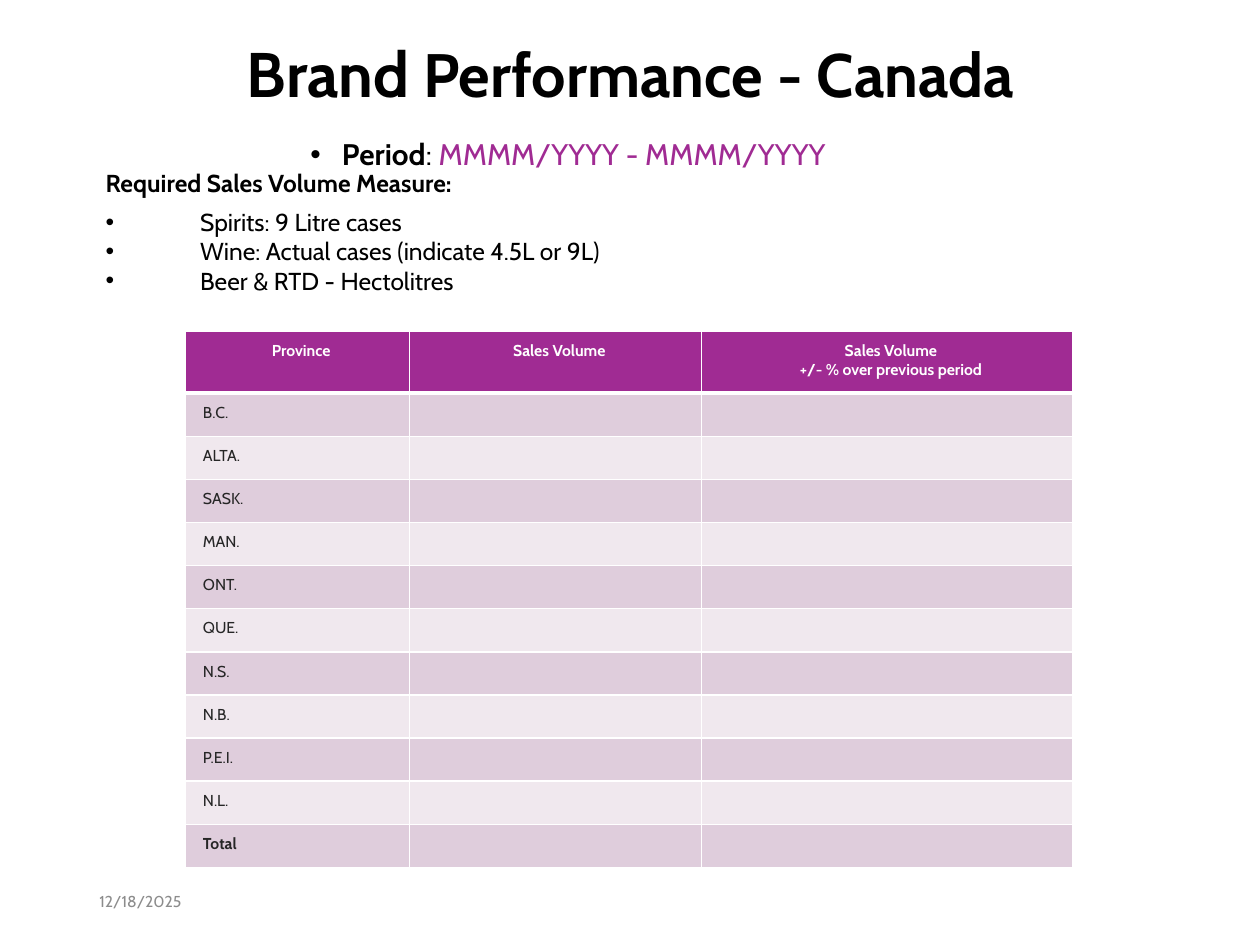
from dataclasses import dataclass

import lxml.etree
import pptx
import pptx.dml.color
import pptx.enum.text
import pptx.oxml
import pptx.oxml.ns
import pptx.util

Pt = pptx.util.Pt
Align = pptx.enum.text.PP_ALIGN
Anchor = pptx.enum.text.MSO_ANCHOR
qn = pptx.oxml.ns.qn


@dataclass(frozen=True)
class Theme:
    font: str = "Cabin"
    text: str = "000000"
    accent: str = "A02B93"
    white: str = "FFFFFF"
    table_text: str = "262626"
    bands: tuple = ("DFCDDC", "F0E8EE")
    muted: str = "8C8C8C"
    title_size: float = 35
    title_lead_size: float = 36
    period_size: float = 17
    body_size: float = 14
    small_size: float = 9


class SlideBuilder:
    def __init__(self, slide, theme):
        self.slide = slide
        self.theme = theme

    def add_run(self, paragraph, text, size, color, bold=False):
        run = paragraph.add_run()
        run.text = text
        run.font.name = self.theme.font
        run.font.size = Pt(size)
        run.font.bold = bold
        run.font.color.rgb = pptx.dml.color.RGBColor.from_string(color)

    def place_title(self, left, top, width, height):
        title = self.slide.shapes.title
        title.left, title.top = Pt(left), Pt(top)
        title.width, title.height = Pt(width), Pt(height)
        frame = title.text_frame
        frame.auto_size = pptx.enum.text.MSO_AUTO_SIZE.NONE
        frame.vertical_anchor = Anchor.MIDDLE
        paragraph = frame.paragraphs[0]
        paragraph.alignment = Align.CENTER
        paragraph.line_spacing = 0.9
        return paragraph

    def add_text_box(self, left, top, width, height):
        box = self.slide.shapes.add_textbox(Pt(left), Pt(top), Pt(width), Pt(height))
        box.text_frame.word_wrap = True
        box.text_frame.vertical_anchor = Anchor.MIDDLE
        return box.text_frame

    def add_bullet(self, paragraph, margin, indent):
        """Call after the paragraph spacing is set, as the XML order matters."""
        properties = paragraph._p.get_or_add_pPr()
        properties.set("marL", str(Pt(margin)))
        properties.set("indent", str(Pt(indent)))
        lxml.etree.SubElement(properties, qn("a:buFont")).set("typeface", "Arial")
        lxml.etree.SubElement(properties, qn("a:buChar")).set("char", "•")

    def style_cell(self, cell, fill, top=1, bottom=1):
        """Set fill, margins and white borders; top and bottom are line widths."""
        cell.margin_left = Pt(10)
        cell.margin_right = cell.margin_top = cell.margin_bottom = Pt(5.76)
        cell.fill.solid()
        cell.fill.fore_color.rgb = pptx.dml.color.RGBColor.from_string(fill)
        borders = {"a:lnL": 1, "a:lnR": 1, "a:lnT": top, "a:lnB": bottom}
        for index, (tag, width) in enumerate(borders.items()):
            line = pptx.oxml.parse_xml(
                f'<{tag} {pptx.oxml.ns.nsdecls("a")} w="{Pt(width)}"><a:solidFill>'
                f'<a:srgbClr val="{self.theme.white}"/></a:solidFill></{tag}>'
            )
            cell._tc.get_or_add_tcPr().insert(index, line)

    def fill_cell(self, cell, text, color, bold, alignment):
        for index, line in enumerate(text.split("\n")):
            frame = cell.text_frame
            paragraph = frame.add_paragraph() if index else frame.paragraphs[0]
            paragraph.alignment = alignment
            if line:
                self.add_run(paragraph, line, self.theme.small_size, color, bold)
            else:
                end = lxml.etree.SubElement(paragraph._p, qn("a:endParaRPr"))
                end.set("sz", str(int(self.theme.small_size * 100)))

    def add_table(self, left, top, column_widths, header_height, row_height, headers, labels):
        theme = self.theme
        shape = self.slide.shapes.add_table(
            len(labels) + 1, len(headers), Pt(left), Pt(top),
            Pt(sum(column_widths)), Pt(header_height + row_height * len(labels)),
        )
        table = shape.table
        for column, width in zip(table.columns, column_widths):
            column.width = Pt(width)
        for index, row in enumerate(table.rows):
            row.height = Pt(row_height if index else header_height)

        for column, header in enumerate(headers):
            cell = table.cell(0, column)
            self.style_cell(cell, theme.accent, bottom=3)
            self.fill_cell(cell, header, theme.white, True, Align.CENTER)
        for row, label in enumerate(labels, start=1):
            for column in range(len(headers)):
                cell = table.cell(row, column)
                self.style_cell(cell, theme.bands[(row - 1) % 2], top=3 if row == 1 else 1)
                text = "" if column else label
                self.fill_cell(cell, text, theme.table_text, label == "Total", Align.LEFT)


def main():
    presentation = pptx.Presentation()
    presentation.slide_width, presentation.slide_height = Pt(720), Pt(540)
    slide = presentation.slides.add_slide(presentation.slide_layouts[5])
    theme = Theme()
    builder = SlideBuilder(slide, theme)
    text_width = 601

    title = builder.place_title(60, 13.7, text_width, 61)
    builder.add_run(title, "Brand", theme.title_lead_size, theme.text, True)
    builder.add_run(title, " Performance - Canada", theme.title_size, theme.text, True)

    period = builder.add_text_box(30.2, 64.8, text_width, 48.2).paragraphs[0]
    period.alignment = Align.CENTER
    period.line_spacing = 0.9
    period.space_after = Pt(6)
    builder.add_bullet(period, 0, -18)
    builder.add_run(period, "Period", theme.period_size, theme.text, True)
    builder.add_run(period, ": ", theme.period_size, theme.text)
    builder.add_run(period, "MMMM/YYYY - MMMM/YYYY", theme.period_size, theme.accent)

    measures = builder.add_text_box(53.3, 116.6, text_width, 48.2)
    measures.margin_bottom = Pt(15.75)
    heading = measures.paragraphs[0]
    heading.line_spacing = 0.7
    heading.space_after = Pt(6)
    builder.add_run(heading, "Required Sales Volume Measure:", theme.body_size, theme.text, True)
    for measure in (
        "Spirits: 9 Litre cases",
        "Wine: Actual cases (indicate 4.5L or 9L)",
        "Beer & RTD - Hectolitres",
    ):
        paragraph = measures.add_paragraph()
        builder.add_bullet(paragraph, 54, -54)
        builder.add_run(paragraph, measure, theme.body_size, theme.text)

    builder.add_table(
        106, 189.5, (128, 167, 212), 35.2, 24.65,
        ("Province", "Sales Volume", "Sales Volume\n+/- % over previous period"),
        ("B.C.", "ALTA.", "SASK.", "MAN.", "ONT.", "QUE.",
         "N.S.", "N.B.", "P.E.I.", "N.L.", "Total"),
    )

    date = builder.add_text_box(49.7, 500.4, 162, 28.8).paragraphs[0]
    builder.add_run(date, "12/18/2025", theme.small_size, theme.muted)

    presentation.save("out.pptx")


if __name__ == "__main__":
    main()
